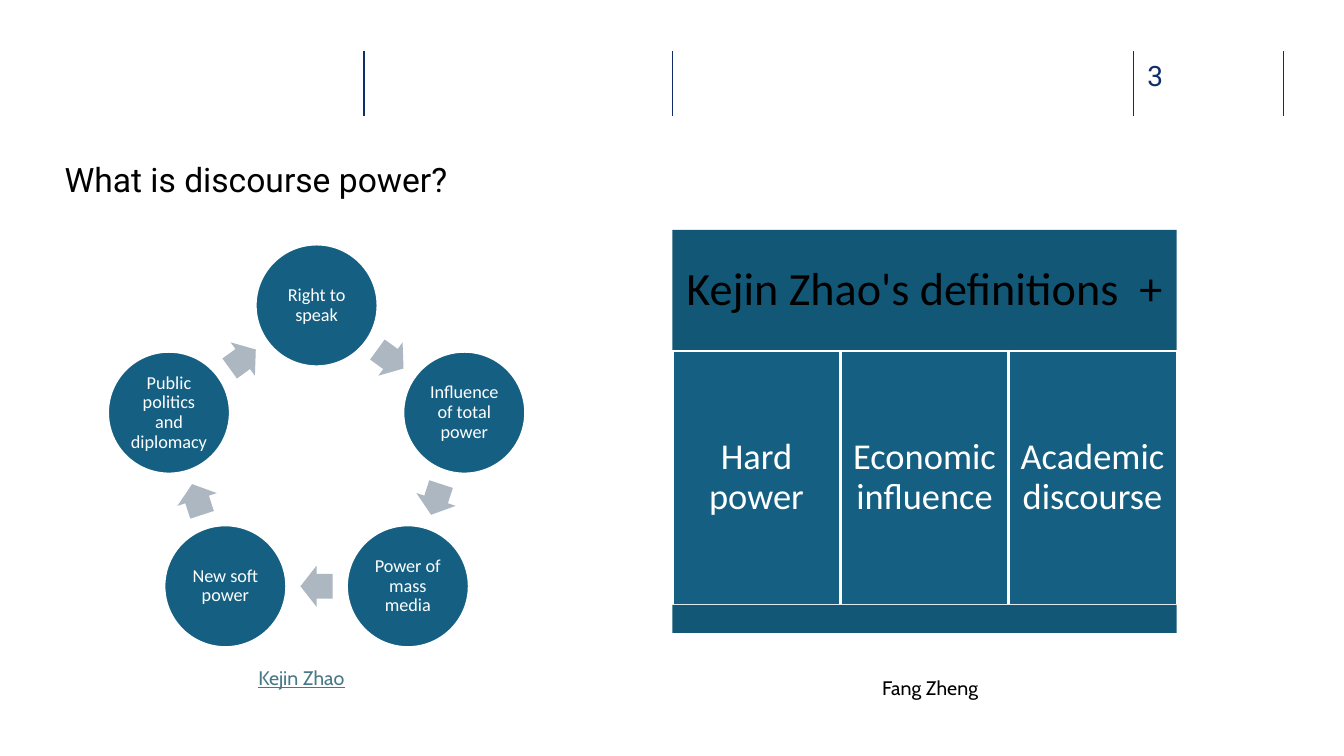
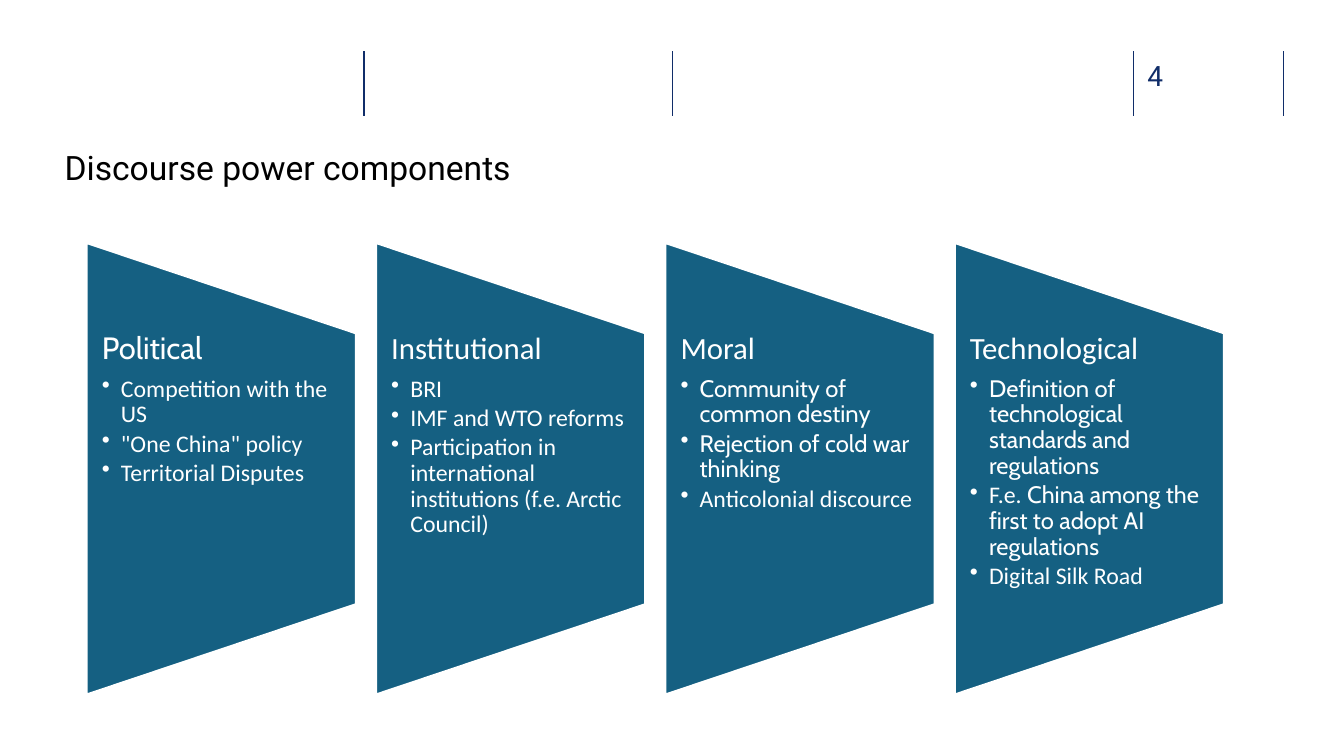
from math import cos, pi, sin

from lxml import etree
from pptx import Presentation
from pptx.dml.color import RGBColor
from pptx.enum.shapes import MSO_CONNECTOR, MSO_SHAPE
from pptx.enum.text import MSO_ANCHOR, PP_ALIGN
from pptx.oxml.ns import qn
from pptx.util import Inches, Pt

OVAL, RECT, ARROW = MSO_SHAPE.OVAL, MSO_SHAPE.RECTANGLE, MSO_SHAPE.RIGHT_ARROW
TRAP = MSO_SHAPE.FLOWCHART_MANUAL_OPERATION
LINE = MSO_CONNECTOR.STRAIGHT
LEFT, MID = PP_ALIGN.LEFT, PP_ALIGN.CENTER
TOP, CENTRE = MSO_ANCHOR.TOP, MSO_ANCHOR.MIDDLE

# Shared style
NAVY, TEAL, DARK, GREY = "102D69", "156082", "135776", "ACB7C1"
LINK, BLACK, WHITE = "467886", "000000", "FFFFFF"
CABIN, CALIBRI, ROBOTO = "Cabin", "Calibri", "Roboto"
RULES = [3.61, 6.67, 11.24, 12.73]
TITLE = {"size": 24, "name": ROBOTO, "color": BLACK}
NUMBER = {"size": 20, "name": ROBOTO, "color": NAVY}
NODE = {"size": 13, "name": CALIBRI, "color": WHITE}
HEAD = {"size": 33, "name": CALIBRI, "color": BLACK}
CELL = {"size": 26, "name": CALIBRI, "color": WHITE}
NAME = {"size": 14, "name": CABIN, "color": BLACK}
REF = {**NAME, "color": LINK, "underline": True}

# Content
CYCLE = ["Right to speak", "Influence of total power",
         "Power of mass media", "New soft power",
         "Public politics and diplomacy"]
BANNER = "Kejin Zhao's definitions  +"
CELLS = ["Hard power", "Economic influence", "Academic discourse"]
NAMES = [("Kejin Zhao", (1.58, 6.56, 2.82, 0.57), REF),
         ("Fang Zheng", (7.02, 6.66, 4.41, 0.34), NAME)]
# Each panel: heading, its font, then bullets as lists of (text, font)
PANELS = [
    ("Political", CABIN, [
        [("Competition with the US", CALIBRI)],
        [('"One China" policy', CALIBRI)],
        [("Territorial Disputes", CALIBRI)]]),
    ("Institutional", CALIBRI, [
        [("BRI", CALIBRI)],
        [("IMF and WTO reforms", CALIBRI)],
        [("Participation in international institutions "
          "(f.e. Arctic Council)", CALIBRI)]]),
    ("Moral", CALIBRI, [
        [("Community of common destiny", CABIN)],
        [("Rejection of cold war thinking", CABIN)],
        [("Anticolonial discource", CALIBRI)]]),
    ("Technological", CALIBRI, [
        [("Definition of technological standards and regulations", CABIN)],
        [("F.e. ", CALIBRI),
         ("China among the first to adopt AI regulations", CABIN)],
        [("Digital Silk Road", CALIBRI)]]),
]


def paint(color, value):
    color.rgb = RGBColor.from_string(value)


def style(font, form):
    for key, value in form.items():
        if key == "color":
            paint(font.color, value)
        else:
            setattr(font, key, Pt(value) if key == "size" else value)


def frame(shape, inset, anchor=TOP):
    """Set wrapping, anchor and (side, top) insets of a text frame."""
    body = shape.text_frame
    body.word_wrap = True
    body.vertical_anchor = anchor
    body.margin_left = body.margin_right = Inches(inset[0])
    body.margin_top = body.margin_bottom = Inches(inset[1])
    return body


def write(par, runs, align=LEFT, space=None, after=0):
    """Fill a paragraph with (text, format) runs."""
    par.alignment = align
    par.space_after = Pt(after)
    if space:
        par.line_spacing = space
    for text, form in runs:
        run = par.add_run()
        run.text = text
        style(run.font, form)


def label(slide, text, box, form, align=LEFT, inset=(0, 0)):
    shape = slide.shapes.add_textbox(*map(Inches, box))
    write(frame(shape, inset).paragraphs[0], [(text, form)], align)


def block(slide, kind, box, fill, edge=None, turn=0):
    shape = slide.shapes.add_shape(kind, *map(Inches, box))
    shape.shadow.inherit = False
    shape.rotation = turn
    shape.fill.solid()
    paint(shape.fill.fore_color, fill)
    if edge:
        paint(shape.line.color, edge)
        shape.line.width = Pt(1.5)
    else:
        shape.line.fill.background()
    return shape


def inside(shape, text, form, inset):
    body = frame(shape, (inset, inset), CENTRE)
    write(body.paragraphs[0], [(text, form)], MID, 0.9)


def bullet(par):
    props = par._p.get_or_add_pPr()
    props.set("marL", str(Inches(0.19)))
    props.set("indent", str(-Inches(0.19)))
    etree.SubElement(props, qn("a:buChar")).set("char", "•")


def start(deck, title, number, top):
    """Add a slide with header rules, page number and title."""
    slide = deck.slides.add_slide(deck.slide_layouts[6])
    for x in RULES:
        rule = slide.shapes.add_connector(
            LINE, Inches(x), Inches(0.51), Inches(x), Inches(1.15))
        paint(rule.line.color, NAVY)
        rule.line.width = Pt(1)
        etree.SubElement(rule._element.spPr, qn("a:effectLst"))
    label(slide, number, (11.38, 0.58, 0.73, 0.34), NUMBER)
    label(slide, title, (0.64, top, 11.72, 0.85), TITLE)
    return slide


def cycle(slide):
    """Circles on a ring, with an arrow halfway between neighbours."""
    cx, cy, ring, size = 3.14, 4.57, 1.54, 1.21
    wide, high = 0.32, 0.41
    step = 360 / len(CYCLE)
    near = ring * cos(pi / len(CYCLE))

    def spot(turn, reach, w, h):
        angle = turn * pi / 180
        return (cx + reach * sin(angle) - w / 2,
                cy - reach * cos(angle) - h / 2, w, h)

    for i, text in enumerate(CYCLE):
        node = block(slide, OVAL, spot(i * step, ring, size, size),
                     TEAL, WHITE)
        inside(node, text, NODE, 0.02)
        turn = (i + 0.5) * step
        arrow = block(slide, ARROW, spot(turn, near, wide, high),
                      GREY, turn=turn)
        arrow.adjustments[0] = 0.6


def grid(slide):
    """Banner, a row of equal cells and a base strip."""
    left, width = 6.67, 5
    banner = block(slide, RECT, (left, 2.28, width, 1.2), DARK)
    inside(banner, BANNER, HEAD, 0.1)
    part = width / len(CELLS)
    for i, text in enumerate(CELLS):
        cell = block(slide, RECT, (left + i * part, 3.48, part, 2.52),
                     TEAL, WHITE)
        inside(cell, text, CELL, 0.1)
    block(slide, RECT, (left, 6, width, 0.28), DARK)


def panels(slide):
    """Row of turned trapezoids, each with a heading and bullets."""
    left, pitch, width, high, mid = 0.86, 2.87, 2.67, 4.48, 4.65
    for i, (head, font, items) in enumerate(PANELS):
        x = left + i * pitch
        block(slide, TRAP,
              (x + (width - high) / 2, mid - width / 2, high, width),
              TEAL, WHITE, 270)
        shape = slide.shapes.add_textbox(
            *map(Inches, (x, 3.3, width, 2.69)))
        body = frame(shape, (0.15, 0))
        form = {"size": 22, "name": font, "color": WHITE}
        write(body.paragraphs[0], [(head, form)], LEFT, 0.9, 7.7)
        for item in items:
            par = body.add_paragraph()
            bullet(par)
            runs = [(text, {"size": 17, "name": face, "color": WHITE})
                    for text, face in item]
            write(par, runs, LEFT, 0.9, 2.5)
            style(par.font, {"size": 17, "color": WHITE})


def main():
    deck = Presentation()
    deck.slide_width, deck.slide_height = Inches(13.33), Inches(7.5)

    # Definitions
    slide = start(deck, "What is discourse power?", "3", 1.58)
    cycle(slide)
    grid(slide)
    for text, box, form in NAMES:
        label(slide, text, box, form, MID, (0.1, 0.05))

    # Components
    slide = start(deck, "Discourse power components", "4", 1.46)
    panels(slide)

    deck.save("out.pptx")


if __name__ == "__main__":
    main()
